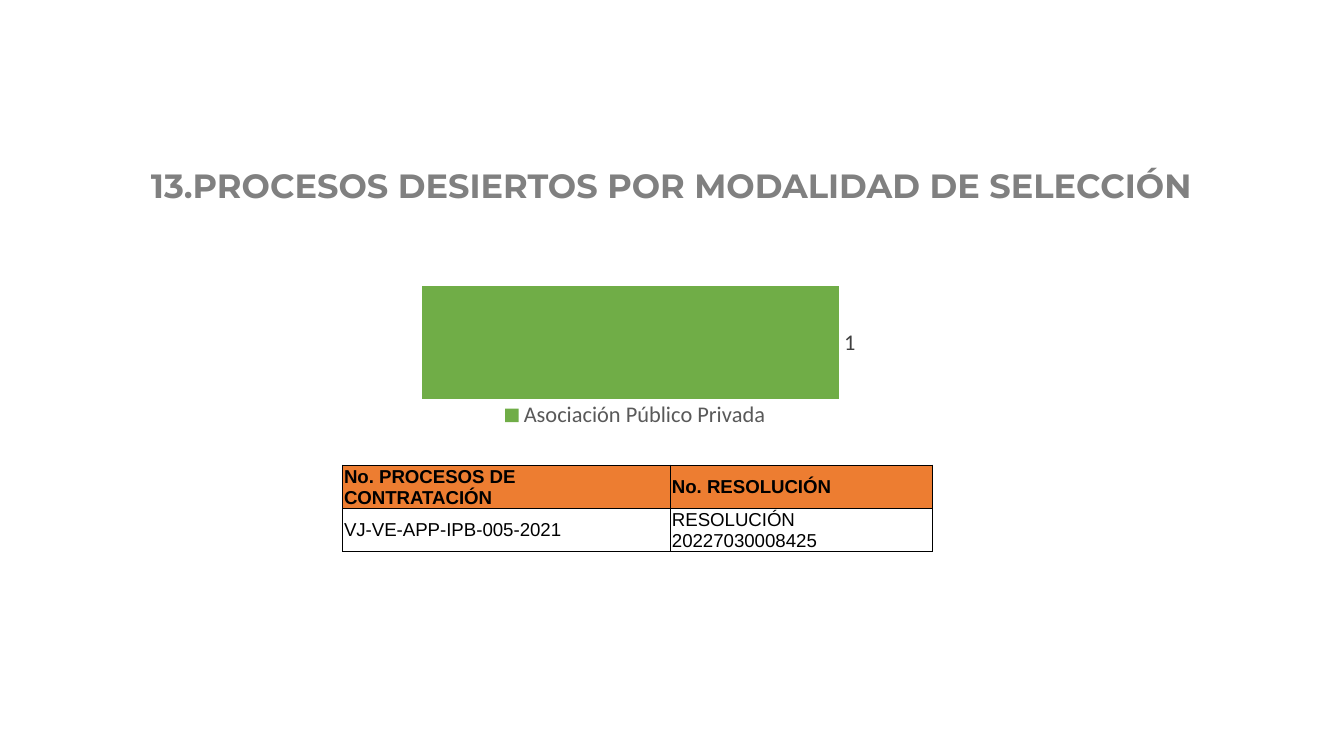
import pptx
import pptx.chart.data
import pptx.dml.color
import pptx.enum.chart
import pptx.enum.text
import pptx.oxml
import pptx.oxml.ns
import pptx.util
from pptx.util import Inches

RGB = pptx.dml.color.RGBColor.from_string
Pt = pptx.util.Pt
THEME = {
    "bar": RGB("70AD47"),
    "head": RGB("ED7D31"),
    "title": dict(name="Montserrat", size=Pt(18), bold=True, color=RGB("808080")),
    "cell": dict(name="Arial", size=Pt(10), color=RGB("000000")),
    "chart": dict(name="Calibri", size=Pt(10), color=RGB("000000")),
    "legend": dict(name="Calibri", size=Pt(12), color=RGB("595959")),
    "label": dict(name="Calibri", size=Pt(12), color=RGB("404040")),
}


def style(font, form):
    for key, val in form.items():
        if key == "color":
            font.color.rgb = val
        else:
            setattr(font, key, val)


def place(part, spot, inner=""):
    """Set a manual layout, in fractions of the chart, at child index spot[0]."""
    for old in part.findall(pptx.oxml.ns.qn("c:layout")):
        part.remove(old)
    modes = "".join(f'<c:{k}Mode val="edge"/>' for k in "xy")
    sizes = "".join(f'<c:{k} val="{v}"/>' for k, v in zip("xywh", spot[1:]))
    part.insert(spot[0], pptx.oxml.parse_xml(
        f'<c:layout {pptx.oxml.ns.nsdecls("c")}><c:manualLayout>'
        f'{inner}{modes}{sizes}</c:manualLayout></c:layout>'))


deck = pptx.Presentation()
deck.slide_width = Inches(10)
deck.slide_height = deck.slide_width * 9 // 16
slide = deck.slides.add_slide(deck.slide_layouts[6])

# Table of processes and resolutions
rows = [
    ["No. PROCESOS DE CONTRATACIÓN", "No. RESOLUCIÓN"],
    ["VJ-VE-APP-IPB-005-2021", "RESOLUCIÓN 20227030008425"],
]
hard = chr(160)  # no-break space that closes each cell and keeps the wrap
table = slide.shapes.add_table(
    2, 2, Inches(2.55), Inches(3.46), Inches(4.39), Inches(0.64)).table
table.first_row = table.horz_banding = False
for col, width in zip(table.columns, (2.44, 1.95)):
    col.width = Inches(width)
inset = dict(
    margin_left=Inches(0.01), margin_right=Inches(0.01),
    margin_top=Inches(0.01), margin_bottom=0,
    vertical_anchor=pptx.enum.text.MSO_ANCHOR.MIDDLE)
for r, row in enumerate(rows):
    for c, text in enumerate(row):
        cell = table.cell(r, c)
        for key, val in inset.items():
            setattr(cell, key, val)
        props = cell._tc.get_or_add_tcPr()
        for side in "LRTB":
            props.append(pptx.oxml.parse_xml(
                f'<a:ln{side} {pptx.oxml.ns.nsdecls("a")} w="6350"><a:solidFill>'
                f'<a:srgbClr val="000000"/></a:solidFill></a:ln{side}>'))
        if r == 0:
            cell.fill.solid()
            cell.fill.fore_color.rgb = THEME["head"]
        else:
            cell.fill.background()
        cell.text = text + hard
        font = cell.text_frame.paragraphs[0].runs[0].font
        style(font, THEME["cell"] | dict(bold=r == 0))

# Bar chart of the selection method
data = pptx.chart.data.CategoryChartData()
data.categories = ["1"]
data.add_series("Asociación Público Privada", [1])
chart = slide.shapes.add_chart(
    pptx.enum.chart.XL_CHART_TYPE.BAR_CLUSTERED,
    Inches(3.06), Inches(1.77), Inches(3.88), Inches(1.9), data).chart
style(chart.font, THEME["chart"])
chart.has_title = False
for axis in (chart.category_axis, chart.value_axis):
    axis.visible = axis.has_major_gridlines = False
scale = chart.value_axis
scale.minimum_scale, scale.maximum_scale = 0, 1.2

plot = chart.plots[0]
plot.gap_width = 75
plot.vary_by_categories = False
bar = plot.series[0]
bar.format.fill.solid()
bar.format.fill.fore_color.rgb = THEME["bar"]
labels = bar.data_labels
labels.show_value = True
labels.position = pptx.enum.chart.XL_LABEL_POSITION.OUTSIDE_END
style(labels.font, THEME["label"])

chart.has_legend = True
legend = chart.legend
legend.position = pptx.enum.chart.XL_LEGEND_POSITION.BOTTOM
legend.include_in_layout = False
style(legend.font, THEME["legend"])
place(chart._chartSpace.chart.plotArea, (0, 0.02, 0.02, 0.96, 0.78),
      '<c:layoutTarget val="inner"/>')
place(legend._element, (1, 0.16, 0.63, 0.54, 0.13))

# Title
box = slide.shapes.add_textbox(Inches(0.97), Inches(1.21), Inches(8.05), Inches(0.37))
frame = box.text_frame
frame.word_wrap = False
frame.auto_size = pptx.enum.text.MSO_AUTO_SIZE.SHAPE_TO_FIT_TEXT
frame.vertical_anchor = pptx.enum.text.MSO_ANCHOR.MIDDLE
para = frame.paragraphs[0]
para.alignment = pptx.enum.text.PP_ALIGN.CENTER
para.line_spacing = 0.9
run = para.add_run()
run.text = "13.PROCESOS DESIERTOS POR MODALIDAD DE SELECCIÓN"
style(run.font, THEME["title"])

deck.save("out.pptx")
